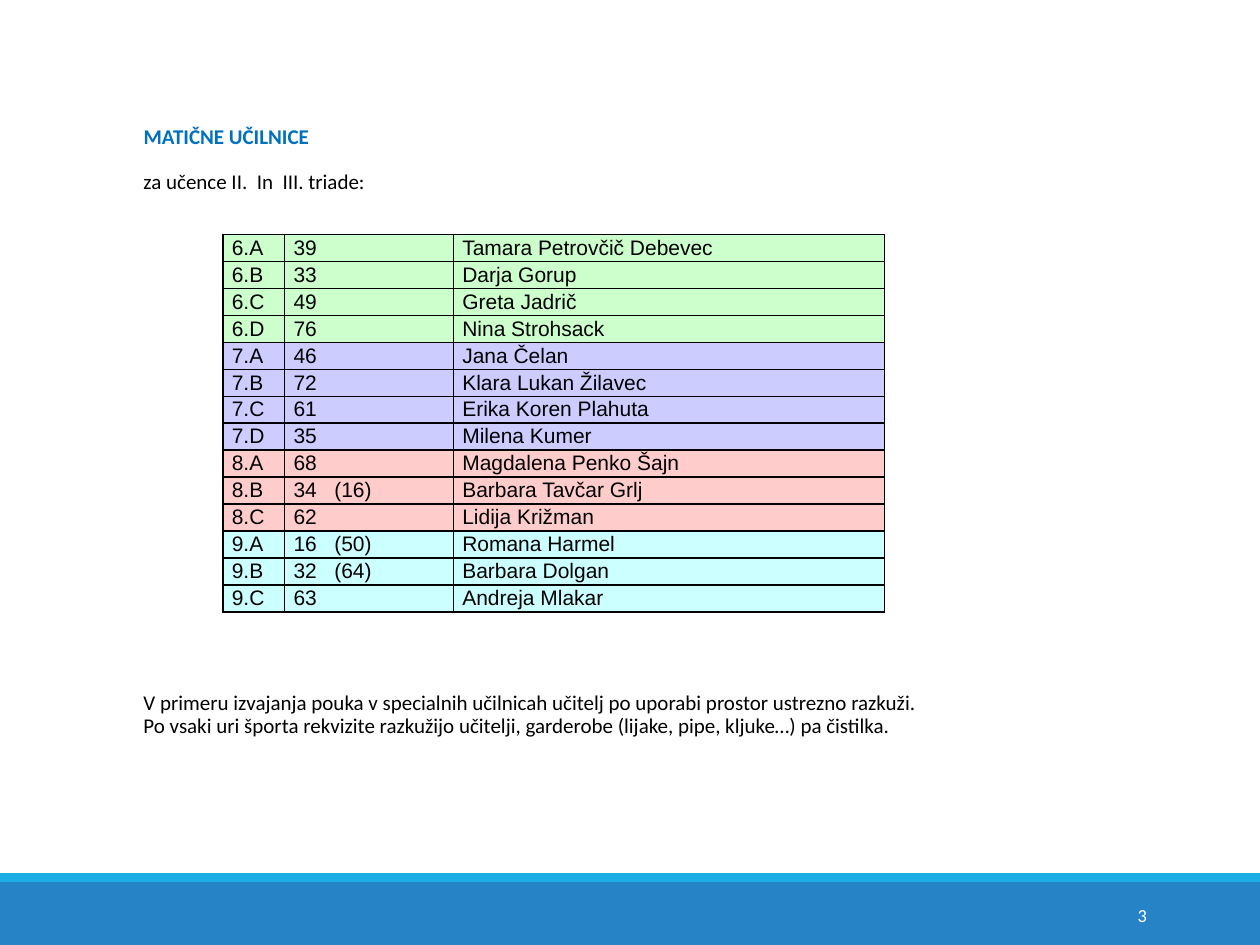
from lxml import etree
from pptx import Presentation
from pptx.dml.color import RGBColor
from pptx.enum.shapes import MSO_SHAPE
from pptx.enum.text import MSO_ANCHOR, PP_ALIGN
from pptx.oxml.ns import qn
from pptx.util import Inches, Pt

RECTANGLE = MSO_SHAPE.RECTANGLE
LEFT, RIGHT, JUSTIFY = PP_ALIGN.LEFT, PP_ALIGN.RIGHT, PP_ALIGN.JUSTIFY
TOP, MIDDLE = MSO_ANCHOR.TOP, MSO_ANCHOR.MIDDLE

BLACK = RGBColor(0x00, 0x00, 0x00)
WHITE = RGBColor(0xFF, 0xFF, 0xFF)
HEADING_BLUE = RGBColor(0x00, 0x70, 0xC0)
FOOTER_BLUE = RGBColor(0x26, 0x83, 0xC6)
STRIPE_BLUE = RGBColor(0x1C, 0xAD, 0xE4)
GRADE_FILLS = {
    "6": RGBColor(0xCC, 0xFF, 0xCC),
    "7": RGBColor(0xCC, 0xCC, 0xFF),
    "8": RGBColor(0xFF, 0xCC, 0xCC),
    "9": RGBColor(0xCC, 0xFF, 0xFF),
}

COLUMN_WIDTHS = (0.49, 1.34, 3.42)
ROW_HEIGHT = 0.2
CLASSROOMS = [
    ("6.A", "39", "Tamara Petrovčič Debevec"),
    ("6.B", "33", "Darja Gorup"),
    ("6.C", "49", "Greta Jadrič"),
    ("6.D", "76", "Nina Strohsack"),
    ("7.A", "46", "Jana Čelan"),
    ("7.B", "72", "Klara Lukan Žilavec"),
    ("7.C", "61", "Erika Koren Plahuta"),
    ("7.D", "35", "Milena Kumer"),
    ("8.A", "68", "Magdalena Penko Šajn"),
    ("8.B", "34   (16)", "Barbara Tavčar Grlj"),
    ("8.C", "62", "Lidija Križman"),
    ("9.A", "16   (50)", "Romana Harmel"),
    ("9.B", "32   (64)", "Barbara Dolgan"),
    ("9.C", "63", "Andreja Mlakar"),
]
JUSTIFIED_CLASSES = ("6.A", "6.B", "6.C", "6.D", "7.A")

INTRO = "za učence II.  In  III. triade:"
NOTES = [
    "V primeru izvajanja pouka v specialnih učilnicah učitelj po uporabi prostor ustrezno razkuži.",
    "Po vsaki uri športa rekvizite razkužijo učitelji, garderobe (lijake, pipe, kljuke…) pa čistilka.",
]


def format_paragraph(p, size, color, font="Calibri", bold=False, align=LEFT, spacing=0.9):
    p.alignment = align
    p.line_spacing = spacing
    p.space_before = p.space_after = Pt(0)
    for r in p.runs:
        r.font.name = font
        r.font.size = Pt(size)
        r.font.bold = bold
        r.font.color.rgb = color


def add_band(s, top, height, color):
    band = s.shapes.add_shape(RECTANGLE, 0, Inches(top), Inches(10), Inches(height))
    band.shadow.inherit = False
    band.fill.solid()
    band.fill.fore_color.rgb = color
    band.line.fill.background()


def set_title(s, text):
    title = s.shapes.title
    title.left, title.top = Inches(1.04), Inches(0.95)
    title.width, title.height = Inches(8.19), Inches(0.3)
    tf = title.text_frame
    tf.text = text
    tf.vertical_anchor = TOP
    format_paragraph(tf.paragraphs[0], 12, HEADING_BLUE, bold=True)


def add_text(s, left, top, width, height, lines, size, color, align=LEFT, anchor=TOP, spacing=0.9):
    box = s.shapes.add_textbox(Inches(left), Inches(top), Inches(width), Inches(height))
    tf = box.text_frame
    tf.word_wrap = True
    tf.vertical_anchor = anchor
    tf.text = "\n".join(lines)
    for p in tf.paragraphs:
        format_paragraph(p, size, color, align=align, spacing=spacing)
    return tf


def set_borders(cell, color, width):
    """Draw the same solid line on all four sides of a cell."""
    tc_pr = cell._tc.get_or_add_tcPr()
    for i, side in enumerate(("a:lnL", "a:lnR", "a:lnT", "a:lnB")):
        ln = etree.Element(qn(side), w=str(Pt(width)))
        fill = etree.SubElement(ln, qn("a:solidFill"))
        etree.SubElement(fill, qn("a:srgbClr"), val=str(color))
        tc_pr.insert(i, ln)


def fill_cell(cell, text, fill, align):
    cell.text_frame.text = text
    cell.margin_left = cell.margin_right = Inches(0.07)
    cell.margin_top = cell.margin_bottom = 0
    cell.fill.solid()
    cell.fill.fore_color.rgb = fill
    set_borders(cell, BLACK, 1)
    format_paragraph(cell.text_frame.paragraphs[0], 12, BLACK, "Arial", align=align, spacing=1.07)


def add_classroom_table(s):
    frame = s.shapes.add_table(
        len(CLASSROOMS), len(COLUMN_WIDTHS), Inches(1.77), Inches(1.86),
        Inches(sum(COLUMN_WIDTHS)), Inches(ROW_HEIGHT * len(CLASSROOMS)))
    table = frame.table
    table.first_row = table.horz_banding = False
    for column, width in zip(table.columns, COLUMN_WIDTHS):
        column.width = Inches(width)
    for row, values in zip(table.rows, CLASSROOMS):
        row.height = Inches(ROW_HEIGHT)
        class_name = values[0]
        for i, (cell, text) in enumerate(zip(row.cells, values)):
            align = JUSTIFY if i == 0 and class_name in JUSTIFIED_CLASSES else LEFT
            fill_cell(cell, text, GRADE_FILLS[class_name[0]], align)


def main():
    prs = Presentation()
    prs.slide_width, prs.slide_height = Inches(10), Inches(7.5)
    s = prs.slides.add_slide(prs.slide_layouts[5])

    add_band(s, 7, 0.5, FOOTER_BLUE)
    add_band(s, 6.93, 0.07, STRIPE_BLUE)
    add_text(s, 8.12, 7.06, 1.08, 0.4, ["3"], 10.5, WHITE, RIGHT, MIDDLE, 1.0)

    set_title(s, "MATIČNE UČILNICE")
    tf = add_text(s, 1.04, 1.31, 8.19, 5.44, [INTRO, *NOTES], 12, BLACK)
    tf.paragraphs[1].space_before = Pt(285)  # leaves room for the table
    add_classroom_table(s)

    prs.save("out.pptx")


if __name__ == "__main__":
    main()
